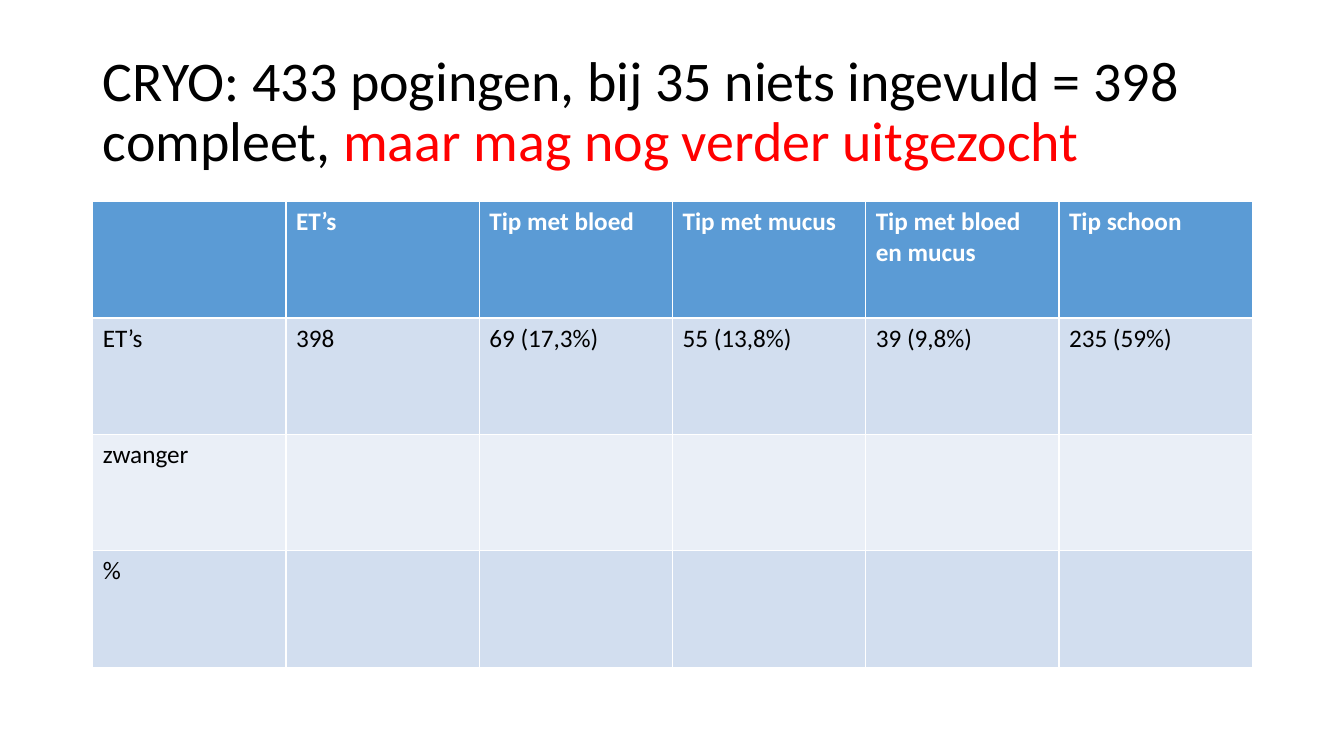
"""Build a slide with a title and a table of transfer results."""
import dataclasses

import pptx
import pptx.util
import pptx.dml.color
import pptx.enum.text


@dataclasses.dataclass(frozen=True)
class Theme:
    """Colours, font and type sizes."""
    font: str = "Calibri"
    dark: str = "000000"
    light: str = "FFFFFF"
    alert: str = "FF0000"
    head: str = "5B9BD5"
    bands: tuple = ("D2DEEF", "EAEFF7")
    title: int = 40
    body: int = 18


THEME = Theme()
TITLE = (
    ("CRYO: 433 pogingen, bij 35 niets ingevuld = 398 compleet, ", THEME.dark),
    ("maar mag nog verder uitgezocht", THEME.alert),
)
ROWS = (
    ("", "ET’s", "Tip met bloed", "Tip met mucus", "Tip met bloed en mucus", "Tip schoon"),
    ("ET’s", "398", "69 (17,3%)", "55 (13,8%)", "39 (9,8%)", "235 (59%)"),
    ("zwanger", "", "", "", "", ""),
    ("%", "", "", "", "", ""),
)


def color(code):
    """Return the colour for a hex code."""
    return pptx.dml.color.RGBColor.from_string(code)


def style(font, size, code, bold=False):
    """Set the face, size, colour and weight of a font."""
    font.name = THEME.font
    font.size = pptx.util.Pt(size)
    font.color.rgb = color(code)
    font.bold = bold


def add_title(slide, box):
    """Place the two-colour title in the box."""
    title = slide.shapes.title
    title.left, title.top, title.width, title.height = box
    frame = title.text_frame
    frame.word_wrap = True
    frame.auto_size = pptx.enum.text.MSO_AUTO_SIZE.NONE
    frame.vertical_anchor = pptx.enum.text.MSO_ANCHOR.MIDDLE
    para = frame.paragraphs[0]
    para.alignment = pptx.enum.text.PP_ALIGN.LEFT
    para.line_spacing = 0.9
    for text, code in TITLE:
        run = para.add_run()
        run.text = text
        style(run.font, THEME.title, code)


def add_grid(slide, box):
    """Fill the box with the table in equal rows and columns."""
    table = slide.shapes.add_table(len(ROWS), len(ROWS[0]), *box).table
    for r, row in enumerate(ROWS):
        head = r == 0
        fill = THEME.head if head else THEME.bands[(r - 1) % 2]
        ink = THEME.light if head else THEME.dark
        for c, text in enumerate(row):
            cell = table.cell(r, c)
            cell.fill.solid()
            cell.fill.fore_color.rgb = color(fill)
            cell.text = text
            style(cell.text_frame.paragraphs[0].font, THEME.body, ink, head)


def main():
    """Build and save the slide."""
    deck = pptx.Presentation()
    deck.slide_width = pptx.util.Inches(13.33)
    deck.slide_height = pptx.util.Inches(7.5)
    slide = deck.slides.add_slide(deck.slide_layouts[5])
    left, width = pptx.util.Inches(0.92), pptx.util.Inches(11.5)
    add_title(slide, (left, pptx.util.Inches(0.4), width, pptx.util.Inches(1.45)))
    add_grid(slide, (left, pptx.util.Inches(2), width, pptx.util.Inches(4.62)))
    deck.save("out.pptx")


if __name__ == "__main__":
    main()
